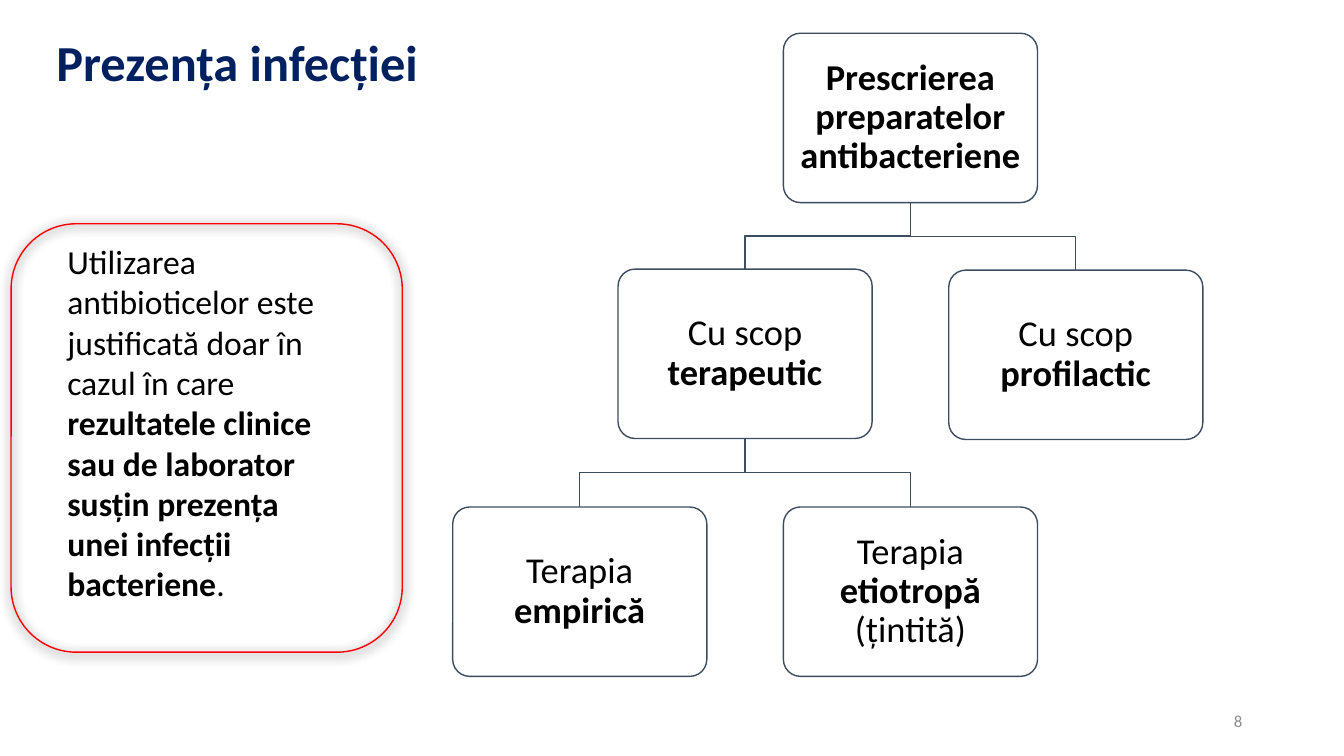
from lxml import etree
from pptx import Presentation
from pptx.dml.color import RGBColor
from pptx.enum.shapes import MSO_SHAPE as SHAPE
from pptx.enum.text import MSO_ANCHOR as ANCHOR, PP_ALIGN as ALIGN
from pptx.oxml.ns import qn
from pptx.util import Inches, Pt

COLORS = {
    "paper": "FFFFFF",
    "text": "000000",
    "title": "002060",
    "node_line": "3E4C60",
    "frame": "FF0000",
    "number": "8C8C8C",
}
NODE_W, NODE_H = 2.52, 1.68


def rgb(name):
    return RGBColor.from_string(COLORS[name])


def write(tf, runs, size, color="text", align=ALIGN.LEFT, bold=None, spacing=None):
    tf.word_wrap = True
    p = tf.paragraphs[0]
    p.alignment = align
    p.line_spacing = spacing
    p.font.name = "Calibri"
    p.font.size = Pt(size)
    p.font.color.rgb = rgb(color)
    p.font.bold = bold
    for text, strong in runs:
        r = p.add_run()
        r.text = text
        if bold is None:
            r.font.bold = strong


def add_text(slide, box, runs, size, anchor=ANCHOR.TOP, **style):
    tf = slide.shapes.add_textbox(*map(Inches, box)).text_frame
    tf.vertical_anchor = anchor
    write(tf, runs, size, **style)


def add_round_rect(slide, box, line, radius=None):
    sp = slide.shapes.add_shape(SHAPE.ROUNDED_RECTANGLE, *map(Inches, box))
    sp.shadow.inherit = False
    sp.line.color.rgb = rgb(line)
    sp.line.width = Pt(1)
    if radius is not None:
        sp.adjustments[0] = radius
    return sp


def add_node(slide, x, y, runs):
    sp = add_round_rect(slide, (x, y, NODE_W, NODE_H), "node_line", 0.1)
    sp.fill.solid()
    sp.fill.fore_color.rgb = rgb("paper")
    tf = sp.text_frame
    tf.margin_left = tf.margin_right = Inches(0.1)
    tf.margin_top = tf.margin_bottom = Inches(0.11)
    tf.vertical_anchor = ANCHOR.MIDDLE
    write(tf, runs, 26, align=ALIGN.CENTER, spacing=0.9)


def add_branch(slide, parent, child):
    x1, y1 = parent[0] + NODE_W / 2, parent[1] + NODE_H
    x2, y2 = child[0] + NODE_W / 2, child[1]
    mid = (y1 + y2) / 2
    builder = slide.shapes.build_freeform(Inches(x1), Inches(y1))
    points = [(x1, mid), (x2, mid), (x2, y2)]
    builder.add_line_segments([(Inches(x), Inches(y)) for x, y in points], close=False)
    sp = builder.convert_to_shape()
    sp.shadow.inherit = False
    sp.fill.background()
    sp.line.color.rgb = rgb("node_line")
    sp.line.width = Pt(1)


def add_tree(slide, left, top):
    step = 1.64
    nodes = {
        "root": (2, 0, [("Prescrierea preparatelor antibacteriene", True)]),
        "therapy": (1, 2.34, [("Cu scop ", False), ("terapeutic", True)]),
        "prophylaxis": (3, 2.35, [("Cu scop ", False), ("profilactic", True)]),
        "empiric": (0, 4.7, [("Terapia ", False), ("empirică", True)]),
        "targeted": (2, 4.7, [("Terapia ", False), ("etiotropă ", True), ("(țintită)", False)]),
    }
    branches = [
        ("root", "therapy"), ("root", "prophylaxis"),
        ("therapy", "empiric"), ("therapy", "targeted"),
    ]
    places = {key: (left + col * step, top + dy) for key, (col, dy, _) in nodes.items()}
    for parent, child in branches:
        add_branch(slide, places[parent], places[child])
    for key, (_, _, runs) in nodes.items():
        add_node(slide, *places[key], runs)


def add_soft_shadow(sp):
    effects = sp._element.spPr.find(qn("a:effectLst"))
    shadow = etree.SubElement(
        effects, qn("a:outerShdw"), blurRad=str(Pt(8.5)), dist=str(Pt(1)),
        dir="5400000", algn="t", rotWithShape="0")
    etree.SubElement(shadow, qn("a:srgbClr"), val=COLORS["text"])


def add_callout(slide, x, y, w, h):
    runs = [
        ("Utilizarea antibioticelor este justificată doar în cazul în care ", False),
        ("rezultatele clinice sau de laborator susțin prezența unei infecții bacteriene", True),
        (".", False),
    ]
    add_text(slide, (x + 0.46, y + 0.12, 2.96, 3.74), runs, 24)
    frame = add_round_rect(slide, (x, y, w, h), "frame")
    frame.fill.background()
    add_soft_shadow(frame)


def main():
    prs = Presentation()
    prs.slide_width, prs.slide_height = Inches(13.33), Inches(7.5)
    slide = prs.slides.add_slide(prs.slide_layouts[6])
    add_tree(slide, 4.49, 0.33)
    add_callout(slide, 0.11, 2.22, 3.88, 4.25)
    add_text(slide, (0.46, 0.33, 5.39, 0.65), [("Prezența infecției", True)], 36,
             color="title", bold=True, spacing=0.9)
    add_text(slide, (9.42, 6.95, 3, 0.4), [("8", False)], 12,
             anchor=ANCHOR.MIDDLE, color="number", align=ALIGN.RIGHT)
    prs.save("out.pptx")


if __name__ == "__main__":
    main()
